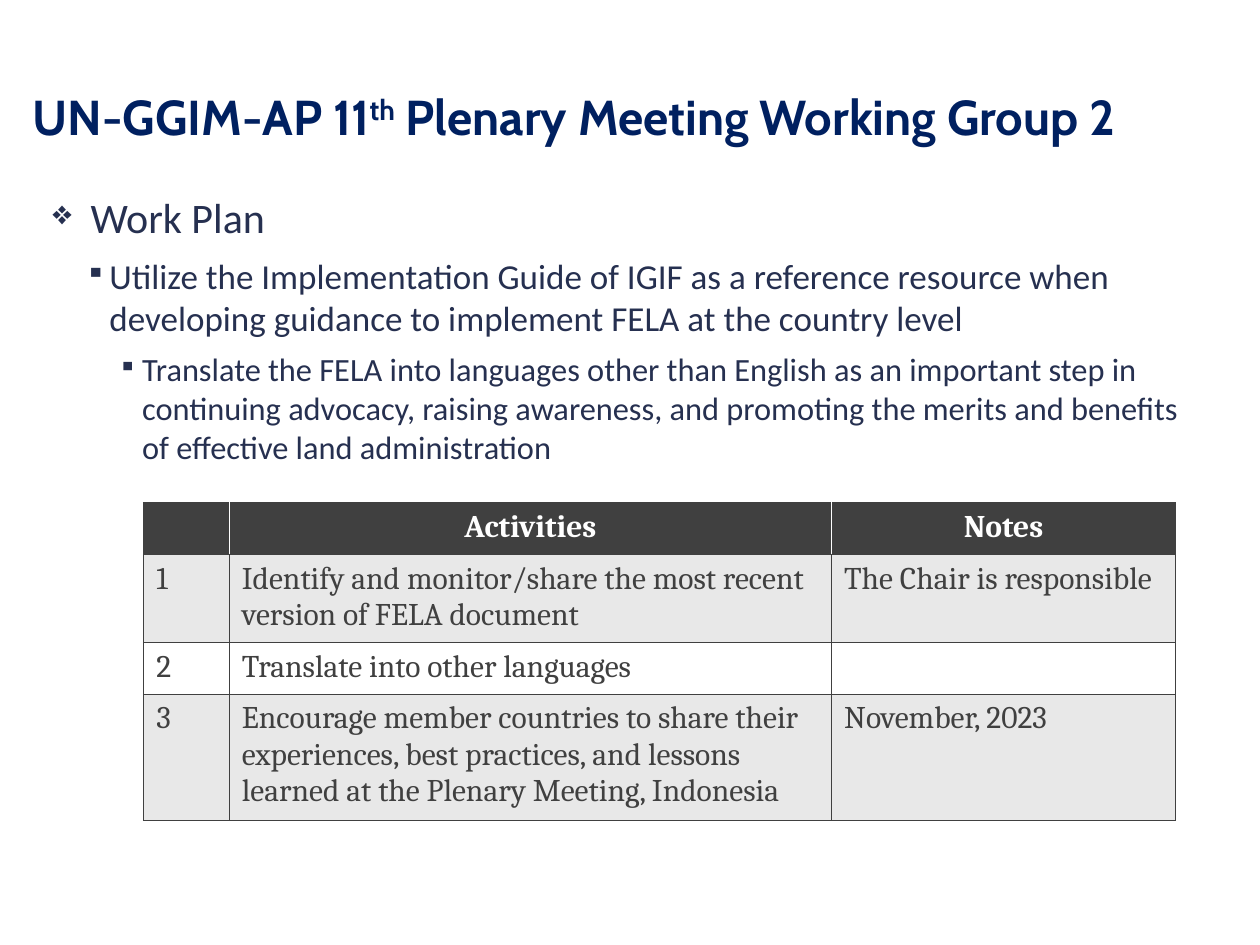
from lxml import etree
from pptx import Presentation
from pptx import util as u
from pptx.dml.color import RGBColor
from pptx.enum import text
from pptx.oxml.ns import qn

COLORS = {"title": "002060", "body": "263050", "dark": "404040",
          "band": "E8E8E8", "white": "FFFFFF"}


def add_text(paragraph, words, font, size, color, bold=False, baseline=0, align=None):
    run = paragraph.add_run()
    run.text = words
    run.font.name = font
    run.font.size = u.Pt(size)
    run.font.bold = bold
    run.font.color.rgb = RGBColor.from_string(COLORS[color])
    if baseline:
        run._r.get_or_add_rPr().set("baseline", str(baseline * 1000))
    if align is not None:
        paragraph.alignment = align


def add_node(parent, tag, **attributes):
    return etree.SubElement(parent, qn(tag), attributes)


deck = Presentation()
deck.slide_width, deck.slide_height = u.Inches(10), u.Inches(7.5)
slide = deck.slides.add_slide(deck.slide_layouts[5])

# Title
title = slide.shapes.title
title.left, title.top = u.Inches(0.16), u.Inches(0.6)
title.width, title.height = u.Inches(9.65), u.Inches(0.61)
heading = title.text_frame
heading.word_wrap = True
heading.auto_size = text.MSO_AUTO_SIZE.NONE
heading.vertical_anchor = text.MSO_ANCHOR.TOP
heading_line = heading.paragraphs[0]
heading_line.line_spacing = 1.07
heading_line.space_after = u.Pt(6)
for words, baseline in [("UN-GGIM-AP 11", 0), ("th", 30),
                        (" Plenary Meeting Working Group 2", 0)]:
    add_text(heading_line, words, "Cabin", 28, "title", bold=True,
             baseline=baseline, align=text.PP_ALIGN.LEFT)

# Work plan: bullet, size, space before, left margin, hanging indent, words
work_plan = [
    ("❖", 24, 0, 0.34, 0.3, "Work Plan"),
    ("▪", 20, 7.5, 0.49, 0.19,
     "Utilize the Implementation Guide of IGIF as a reference resource when "
     "developing guidance to implement FELA at the country level"),
    ("▪", 18.5, 6, 0.75, 0.19,
     "Translate the FELA into languages other than English as an important step in "
     "continuing advocacy, raising awareness, and promoting the merits and benefits "
     "of effective land administration"),
]
body = slide.shapes.add_textbox(u.Inches(0.28), u.Inches(1.47),
                                u.Inches(9.29), u.Inches(5.2)).text_frame
body.word_wrap = True
for level, (bullet, size, before, margin, hanging, words) in enumerate(work_plan):
    item = body.paragraphs[0] if level == 0 else body.add_paragraph()
    item.level = level
    item.space_before = u.Pt(before)
    props = item._p.get_or_add_pPr()
    props.set("marL", str(u.Inches(margin)))
    props.set("indent", str(-u.Inches(hanging)))
    add_node(add_node(props, "a:buClr"), "a:srgbClr", val=COLORS["body"])
    add_node(props, "a:buSzPct", val="80000")
    add_node(props, "a:buChar", char=bullet)
    add_text(item, words, "Calibri", size, "body")

# Activities table
activities = [
    ("", "Activities", "Notes"),
    ("1", "Identify and monitor/share the most recent version of FELA document",
     "The Chair is responsible"),
    ("2", "Translate into other languages", ""),
    ("3", "Encourage member countries to share their experiences, best practices, "
     "and lessons learned at the Plenary Meeting, Indonesia", "November, 2023"),
]
column_widths = [0.68, 4.78, 2.73]
row_heights = [0.41, 0.7, 0.41, 1]
table = slide.shapes.add_table(
    len(row_heights), len(column_widths), u.Inches(1.14), u.Inches(3.99),
    u.Inches(sum(column_widths)), u.Inches(sum(row_heights))).table
table.horz_banding = False
for column, width in zip(table.columns, column_widths):
    column.width = u.Inches(width)

last = len(column_widths) - 1
for r, entries in enumerate(activities):
    table.rows[r].height = u.Inches(row_heights[r])
    header = r == 0
    fill = "dark" if header else "band" if r % 2 else "white"
    for c, words in enumerate(entries):
        cell = table.cell(r, c)
        borders = {"L": "white" if header and c > 0 else "dark",
                   "R": "white" if header and c < last else "dark",
                   "T": "dark", "B": "dark"}
        for side, color in borders.items():
            line = add_node(cell._tc.get_or_add_tcPr(), f"a:ln{side}", w=str(u.Pt(1)))
            add_node(add_node(line, "a:solidFill"), "a:srgbClr", val=COLORS[color])
        cell.fill.solid()
        cell.fill.fore_color.rgb = RGBColor.from_string(COLORS[fill])
        if words:
            add_text(cell.text_frame.paragraphs[0], words, "Cambria", 18,
                     "white" if header else "dark", bold=header,
                     align=text.PP_ALIGN.CENTER if header else text.PP_ALIGN.LEFT)

deck.save("out.pptx")
